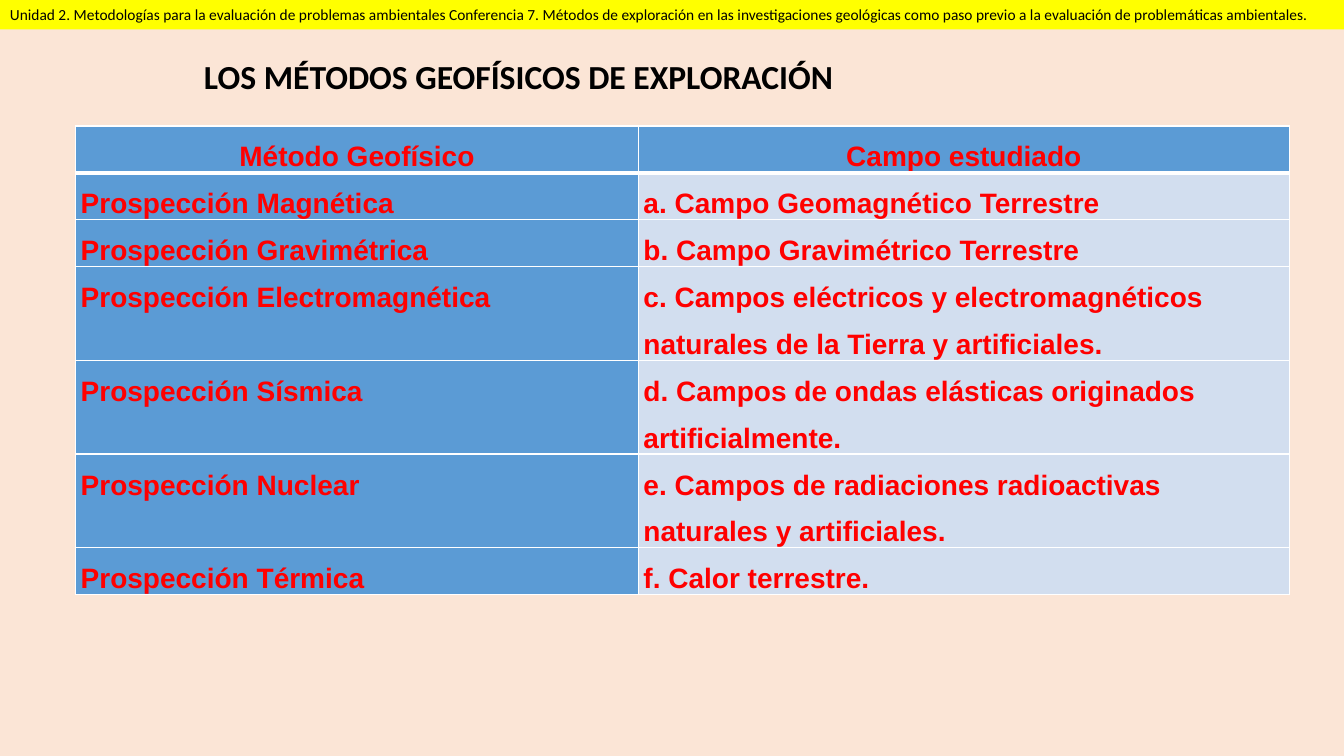
import pptx
import pptx.dml.color
import pptx.enum.shapes
import pptx.enum.text
import pptx.oxml
import pptx.oxml.ns
import pptx.util
from lxml import etree

RGBColor = pptx.dml.color.RGBColor
PEACH = RGBColor(0xFB, 0xE5, 0xD6)
YELLOW = RGBColor(0xFF, 0xFF, 0x00)
BLACK = RGBColor(0x00, 0x00, 0x00)
RED = RGBColor(0xFF, 0x00, 0x00)
BLUE = RGBColor(0x5B, 0x9B, 0xD5)
PALE_BLUE = RGBColor(0xD2, 0xDE, 0xEF)
WHITE = RGBColor(0xFF, 0xFF, 0xFF)

COLUMNS, ROWS = 160, 90
LEFT = pptx.enum.text.PP_ALIGN.LEFT
CENTER = pptx.enum.text.PP_ALIGN.CENTER


class GridSlide:
    """Holds the slide, its grid and its text style."""

    body_font, table_font = "Calibri", "Arial"

    def __init__(self, deck):
        self.deck = deck
        self.slide = deck.slides.add_slide(deck.slide_layouts[6])
        fill = self.slide.background.fill
        fill.solid()
        fill.fore_color.rgb = PEACH

    def x(self, columns):
        return round(self.deck.slide_width * columns / COLUMNS)

    def y(self, rows):
        return round(self.deck.slide_height * rows / ROWS)

    def box(self, left, top, width, height):
        return self.x(left), self.y(top), self.x(width), self.y(height)

    def set_text(self, frame, text, font, size, color, bold=False, align=LEFT, spacing=None):
        frame.text = text
        paragraph = frame.paragraphs[0]
        paragraph.alignment = align
        paragraph.line_spacing = spacing
        for run in paragraph.runs:
            run.font.name = font
            run.font.size = pptx.util.Pt(size)
            run.font.bold = bold
            run.font.color.rgb = color

    def title(self, text, *place):
        frame = self.slide.shapes.add_textbox(*self.box(*place)).text_frame
        frame.word_wrap = False
        frame.auto_size = pptx.enum.text.MSO_AUTO_SIZE.SHAPE_TO_FIT_TEXT
        self.set_text(frame, text, self.body_font, 24, BLACK, bold=True)

    def banner(self, text, *place):
        band = self.slide.shapes.add_shape(
            pptx.enum.shapes.MSO_SHAPE.RECTANGLE, *self.box(*place))
        band.shadow.inherit = False
        band.fill.solid()
        band.fill.fore_color.rgb = YELLOW
        band.line.fill.background()
        band.text_frame.word_wrap = True
        band.text_frame.vertical_anchor = pptx.enum.text.MSO_ANCHOR.TOP
        self.set_text(band.text_frame, text, self.body_font, 11, BLACK)

    def borders(self, cell, top, bottom):
        properties = cell._tc.get_or_add_tcPr()
        for index, (side, points) in enumerate(
                (("L", 1), ("R", 1), ("T", top), ("B", bottom))):
            line = etree.Element(pptx.oxml.ns.qn(f"a:ln{side}"), w=str(pptx.util.Pt(points)))
            fill = etree.SubElement(line, pptx.oxml.ns.qn("a:solidFill"))
            etree.SubElement(fill, pptx.oxml.ns.qn("a:srgbClr"), val=str(WHITE))
            properties.insert(index, line)

    def table(self, entries, left, top, widths, line_height, line_counts):
        height = line_height * sum(line_counts)
        table = self.slide.shapes.add_table(
            len(entries), len(widths), *self.box(left, top, sum(widths), height)).table
        for column, width in zip(table.columns, widths):
            column.width = self.x(width)
        for r, (entry, lines) in enumerate(zip(entries, line_counts)):
            table.rows[r].height = self.y(line_height * lines)
            for c, text in enumerate(entry):
                cell = table.cell(r, c)
                cell.margin_left = cell.margin_right = pptx.util.Inches(0.05)
                cell.margin_top = cell.margin_bottom = 0
                cell.fill.solid()
                cell.fill.fore_color.rgb = BLUE if r == 0 or c == 0 else PALE_BLUE
                self.borders(cell, top=3 if r == 1 else 1, bottom=3 if r == 0 else 1)
                self.set_text(cell.text_frame, text, self.table_font, 20, RED, bold=True,
                              align=CENTER if r == 0 else LEFT, spacing=1.5)


def main():
    deck = pptx.Presentation()
    deck.slide_width = pptx.util.Inches(13.33)
    deck.slide_height = pptx.util.Inches(7.5)
    page = GridSlide(deck)

    # Methods and the field each one studies
    methods = [
        ("Método Geofísico", "Campo estudiado"),
        ("Prospección Magnética", "a. Campo Geomagnético Terrestre"),
        ("Prospección Gravimétrica", "b. Campo Gravimétrico Terrestre"),
        ("Prospección Electromagnética",
         "c. Campos eléctricos y electromagnéticos naturales de la Tierra y artificiales."),
        ("Prospección Sísmica", "d. Campos de ondas elásticas originados artificialmente."),
        ("Prospección Nuclear",
         "e. Campos de radiaciones radioactivas naturales y artificiales."),
        ("Prospección Térmica", "f. Calor terrestre."),
    ]
    page.table(methods, 9, 15, widths=(67, 77.5), line_height=5.58,
               line_counts=(1, 1, 1, 2, 2, 2, 1))

    # Heading
    page.title(" LOS MÉTODOS GEOFÍSICOS DE EXPLORACIÓN", 22.2, 6.1, 78.7, 6)

    # Course banner
    page.banner("Unidad 2. Metodologías para la evaluación de problemas ambientales "
                "Conferencia 7. Métodos de exploración en las investigaciones geológicas "
                "como paso previo a la evaluación de problemáticas ambientales.",
                0, 0, COLUMNS, 3.5)

    deck.save("out.pptx")


if __name__ == "__main__":
    main()
